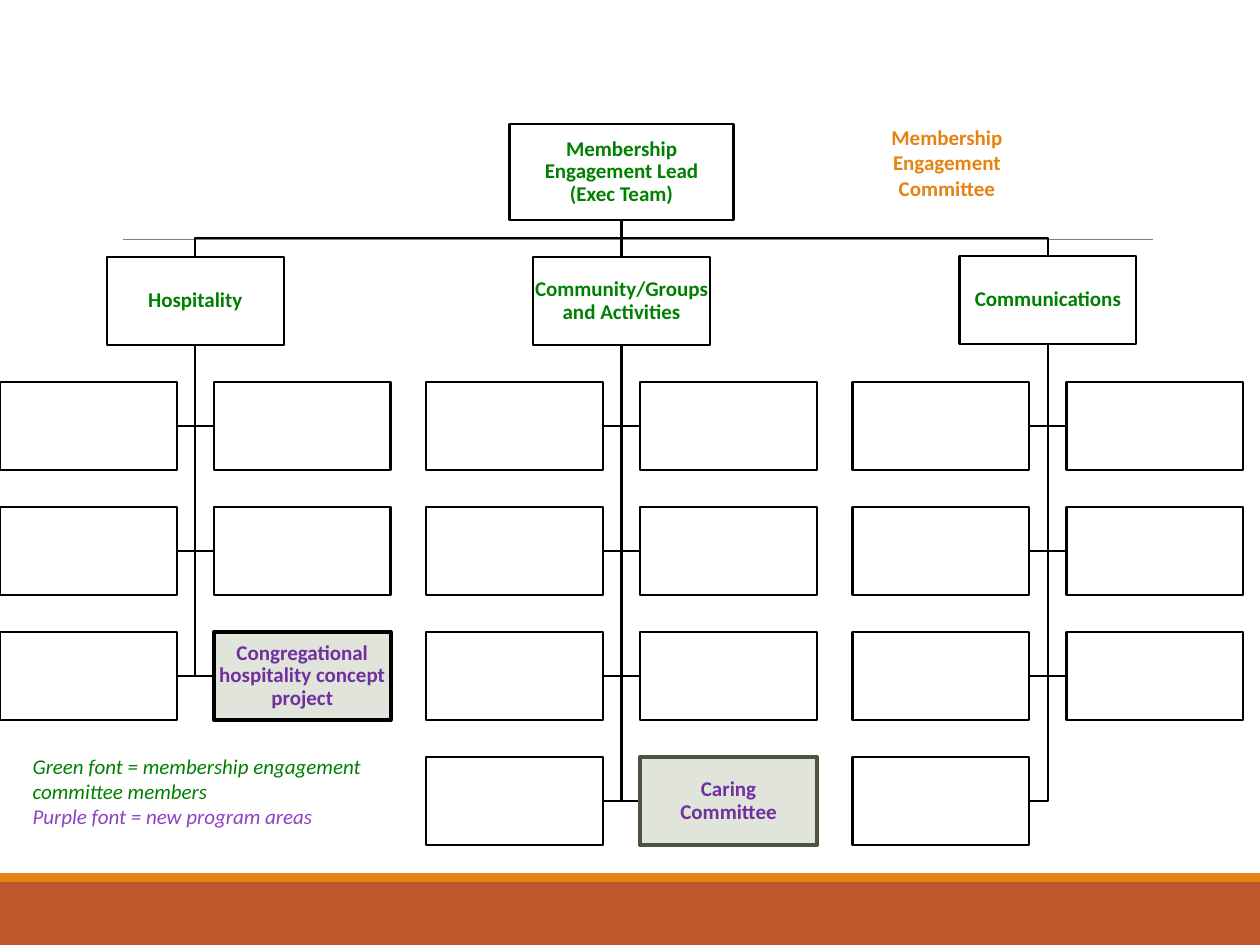
import dataclasses

import pptx
import pptx.dml.color
import pptx.enum.shapes
import pptx.enum.text
import pptx.oxml.ns
import pptx.util
from lxml import etree

Pt = pptx.util.Pt
SHAPES = pptx.enum.shapes.MSO_SHAPE
ALIGN = pptx.enum.text.PP_ALIGN
ANCHOR = pptx.enum.text.MSO_ANCHOR


@dataclasses.dataclass(frozen=True)
class Theme:
    """Colours, type and line sizes of the chart."""
    font: str = "Calibri"
    size: float = 12
    thin: float = 1.25
    thick: float = 2.25
    hairline: float = 0.5
    ink: str = "000000"
    paper: str = "FFFFFF"
    rule: str = "808080"
    member: str = "008000"
    program: str = "7030A0"
    program_key: str = "8D42C6"
    program_fill: str = "E0E4DB"
    olive: str = "4A543E"
    orange: str = "E48312"
    rust: str = "BD582C"


THEME = Theme()
BOX_W, BOX_H = 101, 50.4
GAP = 21.2
ROW_TOP, ROW_PITCH = 218.2, 71.5
UNIT_PITCH = 243.6
UNIT_W = 2 * BOX_W + GAP


def rgb(value):
    """Turn a hex string into a colour."""
    return pptx.dml.color.RGBColor.from_string(value)


def add_run(paragraph, text, color, bold=False, italic=False):
    """Append one formatted run."""
    run = paragraph.add_run()
    run.text = text
    run.font.name = THEME.font
    run.font.size = Pt(THEME.size)
    run.font.bold = bold
    run.font.italic = italic
    run.font.color.rgb = rgb(color)


def paragraph_at(frame, index):
    """Return the first paragraph, or add a further one."""
    return frame.paragraphs[0] if index == 0 else frame.add_paragraph()


def add_box(slide, box, fill, line=None, width=THEME.thin):
    """Draw a flat rectangle in a box of left, top, width, height."""
    rect = slide.shapes.add_shape(SHAPES.RECTANGLE, *map(Pt, box))
    rect.shadow.inherit = False
    rect.fill.solid()
    rect.fill.fore_color.rgb = rgb(fill)
    if line:
        rect.line.color.rgb = rgb(line)
        rect.line.width = Pt(width)
    else:
        rect.line.fill.background()
    return rect


def add_label(rect, lines, color):
    """Centre a bold label in a rectangle."""
    frame = rect.text_frame
    frame.word_wrap = True
    frame.vertical_anchor = ANCHOR.MIDDLE
    frame.margin_left = frame.margin_right = Pt(0.72)
    frame.margin_top = frame.margin_bottom = Pt(0.72)
    label = frame.paragraphs[0]
    label.alignment = ALIGN.CENTER
    label.line_spacing = 0.9
    for index, line in enumerate(lines):
        if index:
            label.add_line_break()
        add_run(label, line, color, bold=True)


def add_elbow(slide, points):
    """Draw an open right-angled line through the points."""
    start, *rest = [(Pt(x), Pt(y)) for x, y in points]
    builder = slide.shapes.build_freeform(*start)
    builder.add_line_segments(rest, close=False)
    elbow = builder.convert_to_shape()
    elbow.shadow.inherit = False
    elbow.fill.background()
    elbow.line.color.rgb = rgb(THEME.ink)
    elbow.line.width = Pt(THEME.thin)


def add_line(slide, start, end, color, width):
    """Draw a straight connector without a shadow."""
    line = slide.shapes.add_connector(
        pptx.enum.shapes.MSO_CONNECTOR.STRAIGHT, *map(Pt, start + end))
    line.line.color.rgb = rgb(color)
    line.line.width = Pt(width)
    etree.SubElement(line._element.spPr, pptx.oxml.ns.qn("a:effectLst"))
    return line


def add_backdrop(slide, box):
    """Draw the footer bands and the hairline rule."""
    left, top, width, height = box
    add_box(slide, (left, top + 504, width, height - 504), THEME.rust)
    add_box(slide, (left, top + 499, width, 5), THEME.orange)
    add_line(slide, (left + 70.5, top + 136.9), (left + 658.8, top + 136.9),
             THEME.rule, THEME.hairline)


def add_unit(slide, left, head_top, name, slots, program=None, outline=None):
    """Draw a unit head with its paired rows; the program takes the last slot."""
    center = left + UNIT_W / 2
    head_bottom = head_top + BOX_H
    places = [(left + (slot % 2) * (BOX_W + GAP), ROW_TOP + slot // 2 * ROW_PITCH)
              for slot in range(slots)]
    for x, y in places:
        side = x + BOX_W if x < center - GAP else x
        middle = y + BOX_H / 2
        add_elbow(slide, [(center, head_bottom), (center, middle), (side, middle)])
    head = add_box(slide, (center - BOX_W / 2, head_top, BOX_W, BOX_H),
                   THEME.paper, THEME.ink)
    add_label(head, [name], THEME.member)
    plain = places[:-1] if program else places
    for x, y in plain:
        add_box(slide, (x, y, BOX_W, BOX_H), THEME.paper, THEME.ink)
    if program:
        project = add_box(slide, (*places[-1], BOX_W, BOX_H),
                          THEME.program_fill, outline, THEME.thick)
        add_label(project, program, THEME.program)
    return head


def add_organization(slide, lead_box):
    """Draw the lead, the three units and the lines between them."""
    units = [
        (146.9, "Hospitality", 6,
         ["Congregational hospitality concept project"], THEME.ink),
        (146.9, "Community/Groups and Activities", 8,
         ["Caring", "Committee"], THEME.olive),
        (146.2, "Communications", 7),
    ]
    left, top, width, height = lead_box
    lead_center, lead_bottom = left + width / 2, top + height
    heads = []
    for index, unit in enumerate(units):
        unit_left = index * UNIT_PITCH
        center, head_top = unit_left + UNIT_W / 2, unit[0]
        if index != 1:
            bus = (lead_bottom + head_top) / 2
            add_elbow(slide, [(lead_center, lead_bottom), (lead_center, bus),
                              (center, bus), (center, head_top)])
        heads.append(add_unit(slide, unit_left, *unit))
    lead = add_box(slide, lead_box, THEME.paper, THEME.ink)
    add_label(lead, ["Membership Engagement Lead", "(Exec Team)"], THEME.member)
    trunk = add_line(slide, (lead_center, lead_bottom), (lead_center, units[1][0]),
                     THEME.ink, THEME.thin)
    trunk.begin_connect(lead, 2)
    trunk.end_connect(heads[1], 0)


def add_title(slide, box):
    """Place the committee name in the title placeholder."""
    title = slide.shapes.title
    title.left, title.top, title.width, title.height = map(Pt, box)
    frame = title.text_frame
    frame.word_wrap = True
    frame.auto_size = pptx.enum.text.MSO_AUTO_SIZE.NONE
    frame.vertical_anchor = ANCHOR.TOP
    for index, word in enumerate(["Membership", "Engagement", "Committee"]):
        paragraph = paragraph_at(frame, index)
        paragraph.alignment = ALIGN.CENTER
        add_run(paragraph, word, THEME.orange, bold=True)


def add_legend(slide, box):
    """Explain the font colours."""
    frame = slide.shapes.add_textbox(*map(Pt, box)).text_frame
    frame.word_wrap = True
    entries = [("Green font = membership engagement committee members", THEME.member),
               ("Purple font = new program areas", THEME.program_key)]
    for index, (text, color) in enumerate(entries):
        add_run(paragraph_at(frame, index), text, color, italic=True)


def main():
    """Build and save the slide."""
    deck = pptx.Presentation()
    deck.slide_width, deck.slide_height = Pt(720), Pt(540)
    slide = deck.slides.add_slide(deck.slide_layouts.get_by_name("Title Only"))
    add_backdrop(slide, (0, 0, 720, 540))
    add_organization(slide, (291.2, 70.8, 128, 54.8))
    add_title(slide, (481, 67.7, 120.2, 51.1))
    add_legend(slide, (11.5, 427, 231.1, 51.1))
    deck.save("out.pptx")


if __name__ == "__main__":
    main()
